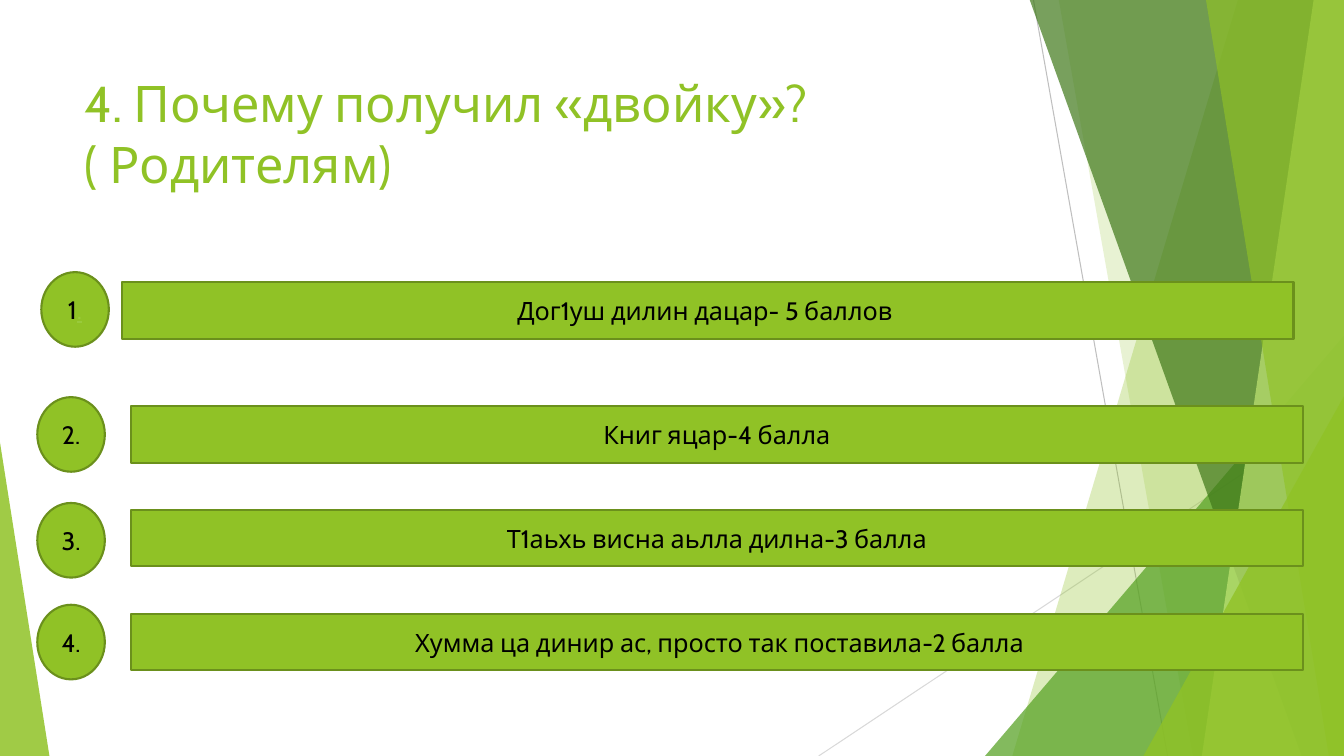
from lxml import etree
from pptx import Presentation, util as u
from pptx.dml.color import RGBColor
from pptx.enum import shapes, text
from pptx.oxml.ns import qn

PX = 9144  # EMU in one px, 100 px to the inch
WIDE, HIGH = 1333, 750
FONT = "Cabin"
HUES = {
    "lime": "90C226", "edge": "6B901C", "leaf": "54A021", "moss": "3F7819",
    "pale": "C0E474", "mark": "99CA3C", "ink": "000000",
    "gray": "BFBFBF", "mist": "D9D9D9",
}
KINDS = shapes.MSO_SHAPE


def hue(name):
    return RGBColor.from_string(HUES[name])


def write(para, words, size=18, color="ink", line=False):
    """Add one formatted run to a paragraph."""
    run = para.add_run()
    run.text = words
    font = run.font
    font.name, font.size, font.color.rgb = FONT, u.Pt(size), hue(color)
    if line:
        font.underline = True


class Deck:
    def __init__(self):
        self.file = Presentation()
        self.file.slide_width, self.file.slide_height = WIDE * PX, HIGH * PX
        self.slide = self.file.slides.add_slide(self.file.slide_layouts[5])
        self.items = self.slide.shapes

    def paint(self, shape, fill, alpha=100, edge=None):
        shape.shadow.inherit = False
        shape.fill.solid()
        shape.fill.fore_color.rgb = hue(fill)
        if alpha < 100:
            tint = shape._element.spPr.find(qn("a:solidFill"))[0]
            etree.SubElement(tint, qn("a:alpha")).set("val", str(alpha * 1000))
        if edge:
            shape.line.color.rgb = hue(edge)
            shape.line.width = u.Pt(1.5)
        else:
            shape.line.fill.background()

    def line(self, ends, color):
        link = self.items.add_connector(
            shapes.MSO_CONNECTOR.STRAIGHT, *(n * PX for n in ends))
        link.line.color.rgb = hue(color)
        link.line.width = u.Pt(0.75)
        etree.SubElement(link._element.spPr, qn("a:effectLst"))

    def band(self, top, foot, fill, alpha):
        """Band from a slanted left side to the right slide edge."""
        pen = self.items.build_freeform(top, -1, scale=PX)
        pen.add_line_segments([(WIDE, -1), (WIDE, HIGH), (foot, HIGH)])
        self.paint(pen.convert_to_shape(), fill, alpha)

    def shape(self, kind, box, fill="lime", alpha=100, edge=None):
        item = self.items.add_shape(kind, *(n * PX for n in box))
        self.paint(item, fill, alpha, edge)
        return item

    def wedge(self, box, tip, fill, alpha):
        self.shape(KINDS.ISOSCELES_TRIANGLE, box, fill, alpha).adjustments[0] = tip

    def label(self, kind, box, words, dot=""):
        frame = self.shape(kind, box, edge="edge").text_frame
        frame.word_wrap = True
        frame.vertical_anchor = text.MSO_ANCHOR.MIDDLE
        para = frame.paragraphs[0]
        para.alignment = text.PP_ALIGN.CENTER
        write(para, words)
        if dot:
            write(para, dot, color="mark", line=True)

    def title(self, box, words):
        item = self.items.title
        item.left, item.top, item.width, item.height = (n * PX for n in box)
        frame = item.text_frame
        frame.word_wrap = True
        frame.auto_size = text.MSO_AUTO_SIZE.NONE
        frame.vertical_anchor = text.MSO_ANCHOR.TOP
        para = frame.paragraphs[0]
        para.alignment = text.PP_ALIGN.LEFT
        write(para, words, size=36, color="lime")
        self.items._spTree.append(item._element)  # bring to front


def main():
    deck = Deck()

    # Backdrop of lines, bands and wedges
    deck.line((1025, 0, 1158, HIGH), "gray")
    deck.line((WIDE, 403, 812, HIGH), "mist")
    deck.band(1228, 1004, "lime", 30)
    deck.band(1050, 1183, "lime", 20)
    deck.wedge((977, 333, 356, 417), 1, "leaf", 72)
    deck.band(1021, 1291, "moss", 70)
    deck.band(1303, 1192, "pale", 70)
    deck.band(1196, 1318, "lime", 65)
    deck.wedge((1134, 393, 199, 357), 1, "lime", 80)
    deck.wedge((0, 439, 49, 311), 0, "lime", 85)

    # Answers: disc left and top, bar left and top, number, dot, wording
    rows = [
        (41, 270, 121, 280, "1", ".", "Дог1уш дилин дацар- 5 баллов "),
        (37, 394, 130, 403, "2.", "", "Книг яцар-4 балла"),
        (37, 499, 130, 506, "3.", "", "Т1аьхь висна аьлла дилна-3 балла"),
        (37, 600, 130, 609, "4.", "",
         " Хумма ца динир ас, просто так поставила-2 балла"),
    ]
    for left, top, start, level, number, dot, words in rows:
        deck.label(KINDS.OVAL, (left, top, 67, 74), number, dot)
        deck.label(KINDS.RECTANGLE, (start, level, 1162, 56), words)

    # Title
    deck.title((74, 67, 1033, 144), "4. Почему получил «двойку»? ( Родителям)")
    deck.file.save("out.pptx")


if __name__ == "__main__":
    main()
